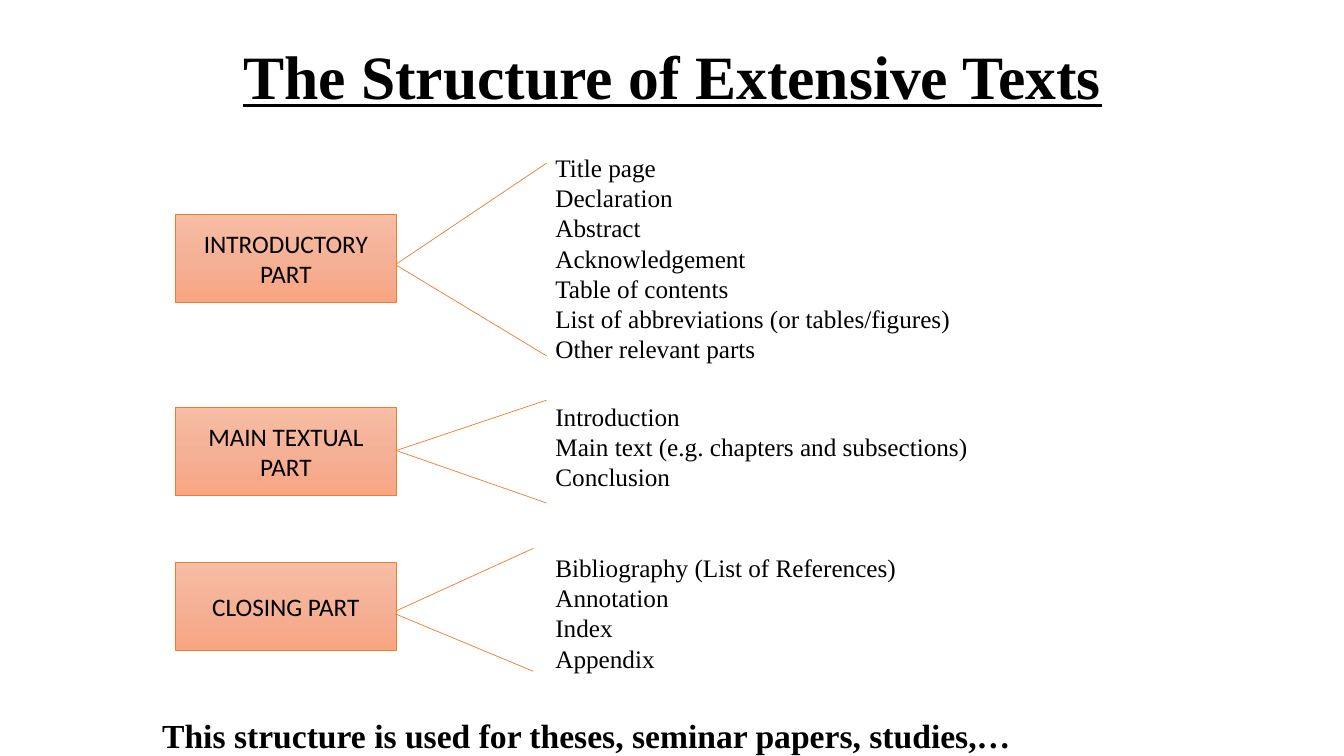
import copy
from dataclasses import dataclass

import pptx
import pptx.dml.color
import pptx.enum.shapes
import pptx.enum.text
import pptx.oxml.ns
import pptx.util
from pptx.util import Inches

ALIGN = pptx.enum.text.PP_ALIGN
ANCHOR = pptx.enum.text.MSO_ANCHOR


@dataclass(frozen=True)
class Theme:
    serif: str = "Times New Roman"
    sans: str = "Calibri"
    text: str = "000000"
    line: str = "ED7D31"
    gradient: tuple = ("F7BDA5", "F5B196", "F8A582")
    title_size: int = 44
    footer_size: int = 24
    body_size: int = 18
    line_width: float = 0.5


@dataclass(frozen=True)
class Part:
    name: str
    items: tuple
    box_top: float
    items_top: float
    items_width: float
    items_height: float
    items_align: ALIGN
    branches: tuple  # (start x, start y, end x, end y) in inches


THEME = Theme()
BOX_LEFT, BOX_WIDTH, BOX_HEIGHT = 1.74, 2.19, 0.87
ITEMS_LEFT, ITEMS_INDENT = 4.41, 1

PARTS = (
    Part("INTRODUCTORY PART",
         ("Title page", "Declaration", "Abstract", "Acknowledgement", "Table of contents",
          "List of abbreviations (or tables/figures)", "Other relevant parts"),
         2.13, 1.46, 9.18, 2.22, ALIGN.LEFT,
         ((3.93, 2.62, 5.42, 1.62), (3.93, 2.63, 5.42, 3.53))),
    Part("MAIN TEXTUAL PART",
         ("Introduction", "Main text (e.g. chapters and subsections)", "Conclusion"),
         4.04, 3.93, 6.02, 1.01, ALIGN.JUSTIFY,
         ((3.93, 4.47, 5.42, 3.97), (3.93, 4.47, 5.42, 4.99))),
    Part("CLOSING PART",
         ("Bibliography (List of References)", "Annotation", "Index", "Appendix"),
         5.58, 5.43, 6.51, 1.62, ALIGN.LEFT,
         ((3.93, 6.06, 5.29, 5.44), (3.92, 6.09, 5.29, 6.66))),
)


def color(value):
    return pptx.dml.color.RGBColor.from_string(value)


def style_line(line):
    line.color.rgb = color(THEME.line)
    line.width = pptx.util.Pt(THEME.line_width)


def write(shape, lines, size, font=THEME.serif, align=ALIGN.LEFT, anchor=ANCHOR.TOP, bold=False):
    """Fill a shape with one paragraph per line and return the paragraphs."""
    frame = shape.text_frame
    frame.word_wrap = True
    frame.vertical_anchor = anchor
    frame.text = "\n".join(lines)
    for paragraph in frame.paragraphs:
        paragraph.alignment = align
        paragraph.font.name = font
        paragraph.font.size = pptx.util.Pt(size)
        paragraph.font.bold = bold
        paragraph.font.color.rgb = color(THEME.text)
    return frame.paragraphs


def add_text(page, left, top, width, height, lines, size, **style):
    box = page.shapes.add_textbox(Inches(left), Inches(top), Inches(width), Inches(height))
    return write(box, lines, size, **style)


def fill_gradient(fill):
    """Apply the theme's three colours from top to bottom."""
    fill.gradient()
    fill.gradient_angle = 270
    first = fill.gradient_stops[0]._gs
    first.addnext(copy.deepcopy(first))
    for index, (stop, value) in enumerate(zip(fill.gradient_stops, THEME.gradient)):
        stop.position = index / 2
        stop.color.rgb = color(value)


def add_part_box(page, part):
    box = page.shapes.add_shape(
        pptx.enum.shapes.MSO_SHAPE.RECTANGLE,
        Inches(BOX_LEFT), Inches(part.box_top), Inches(BOX_WIDTH), Inches(BOX_HEIGHT))
    box.shadow.inherit = False
    fill_gradient(box.fill)
    style_line(box.line)
    write(box, [part.name], THEME.body_size, font=THEME.sans,
          align=ALIGN.CENTER, anchor=ANCHOR.MIDDLE)


def add_items(page, part):
    paragraphs = add_text(page, ITEMS_LEFT, part.items_top, part.items_width, part.items_height,
                          part.items, THEME.body_size, align=part.items_align)
    for paragraph in paragraphs:
        paragraph.level = 2
        properties = paragraph._p.get_or_add_pPr()
        properties.set("marL", str(Inches(ITEMS_INDENT)))
        properties.set("indent", "0")


def add_branch(page, ends):
    branch = page.shapes.add_connector(
        pptx.enum.shapes.MSO_CONNECTOR.STRAIGHT, *(Inches(value) for value in ends))
    style_line(branch.line)
    properties = branch._element.spPr
    properties.append(properties.makeelement(pptx.oxml.ns.qn("a:effectLst")))


def main():
    deck = pptx.Presentation()
    deck.slide_width, deck.slide_height = Inches(13.33), Inches(7.5)
    page = deck.slides.add_slide(deck.slide_layouts[6])

    title, = add_text(page, 0.92, 0.06, 11.5, 1.45, ["The Structure of Extensive Texts"],
                      THEME.title_size, align=ALIGN.CENTER, anchor=ANCHOR.MIDDLE, bold=True)
    title.font.underline = True
    title.line_spacing = 0.9
    add_text(page, 1.51, 7.04, 10.61, 0.5,
             ["This structure is used for theses, seminar papers, studies,…"],
             THEME.footer_size, bold=True)

    for part in PARTS:
        add_part_box(page, part)
        add_items(page, part)
        for ends in part.branches:
            add_branch(page, ends)

    deck.save("out.pptx")


if __name__ == "__main__":
    main()
